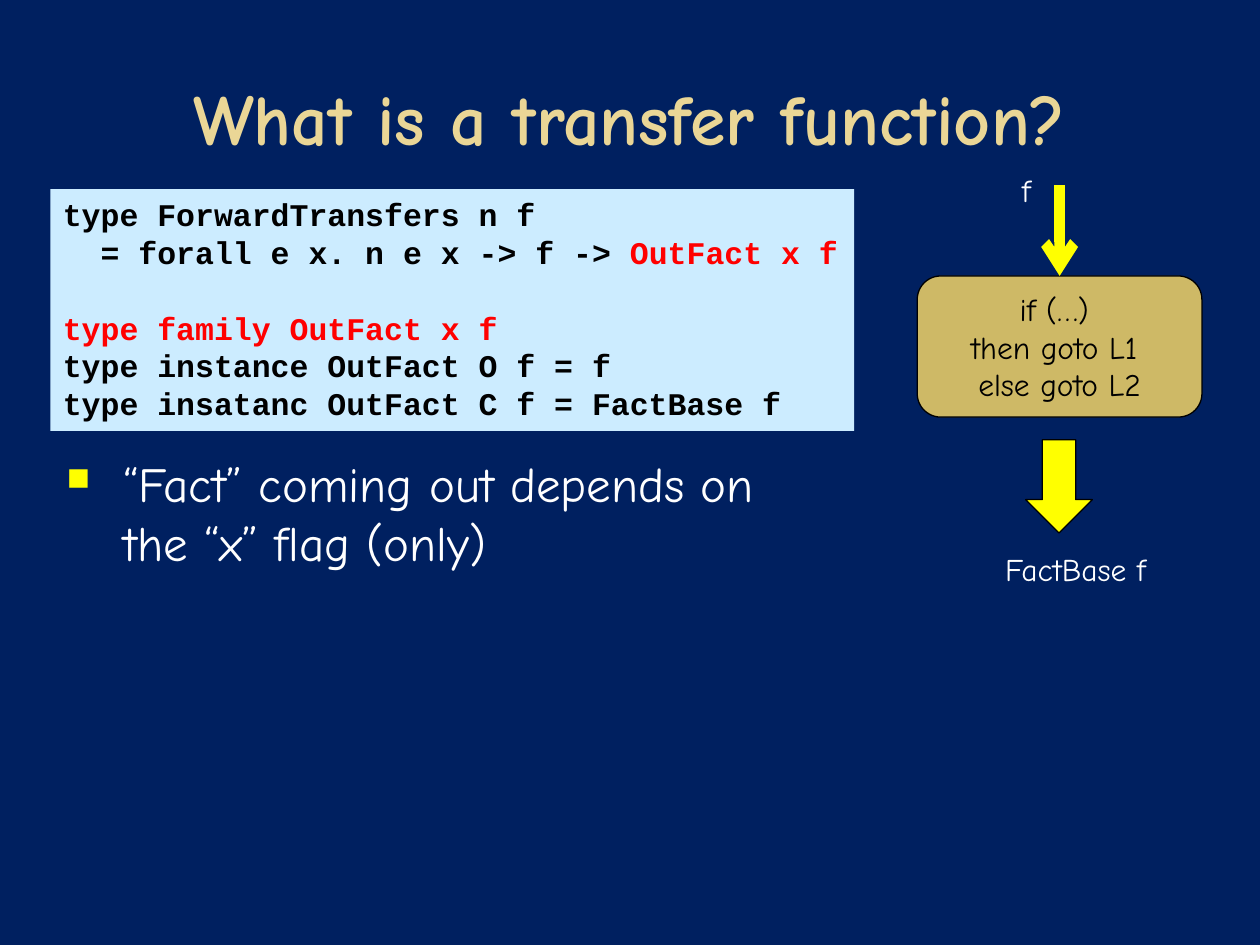
"""Build a slide explaining transfer functions in dataflow analysis."""
from dataclasses import dataclass
from typing import Optional

from lxml import etree
from pptx import Presentation
from pptx import util as u
from pptx.dml.color import RGBColor
from pptx.enum import shapes, text
from pptx.oxml import ns

HUES = {
    "navy": "002060", "gold": "EAD696", "white": "FFFFFF", "black": "000000",
    "red": "FF0000", "yellow": "FFFF00", "sky": "CCECFF", "tan": "CEB966",
}
SANS, MONO = "Comic Neue", "Courier New"
KIND, ALIGN = shapes.MSO_SHAPE, text.PP_ALIGN


@dataclass
class Box:
    left: float
    top: float
    width: float
    height: float

    def emu(self) -> list:
        return [u.Inches(n) for n in (self.left, self.top, self.width, self.height)]


@dataclass
class Line:
    spans: list
    indent: float = 0
    gap: float = 0


@dataclass
class Label:
    words: str
    box: Box


CODE = [
    Line([("type ForwardTransfers n f", "black")]),
    Line([("= forall e x. n e x -> f -> ", "black"), ("OutFact x f", "red")], indent=0.3),
    Line([("type family OutFact x f", "red")], gap=21.6),
    Line([("type instance OutFact O f = f", "black")]),
    Line([("type insatanc OutFact C f = FactBase f", "black")]),
]
LABELS = [
    Label("FactBase f", Box(7.79, 4.32, 1.49, 0.4)),
    Label("f", Box(7.98, 1.31, 0.33, 0.4)),
]


def hue(name: str) -> RGBColor:
    return RGBColor.from_string(HUES[name])


def style(para, size: float, color: str, align=ALIGN.LEFT, face: str = SANS, bold: bool = False) -> None:
    para.alignment = align
    font = para.font
    font.name, font.size, font.bold = face, u.Pt(size), bold
    font.color.rgb = hue(color)


def add_block(slide, kind, box: Box, fill: str, edge: Optional[str] = "black"):
    block = slide.shapes.add_shape(kind, *box.emu())
    block.shadow.inherit = False
    block.fill.solid()
    block.fill.fore_color.rgb = hue(fill)
    if edge:
        block.line.color.rgb = hue(edge)
        block.line.width = u.Pt(0.75)
    else:
        block.line.fill.background()
    return block


def add_text(slide, label: Label, size: float, align, wrap: bool):
    frame = slide.shapes.add_textbox(*label.box.emu()).text_frame
    frame.word_wrap = wrap
    para = frame.paragraphs[0]
    para.text = label.words
    style(para, size, "white", align)
    return para


def add_code(slide, box: Box, lines: list) -> None:
    frame = add_block(slide, KIND.RECTANGLE, box, "sky", None).text_frame
    frame.word_wrap = False
    frame.vertical_anchor = text.MSO_ANCHOR.TOP
    for i, line in enumerate(lines):
        para = frame.add_paragraph() if i else frame.paragraphs[0]
        style(para, 18, "black", face=MONO, bold=True)
        para.space_before = u.Pt(line.gap)
        para._p.get_or_add_pPr().set("marL", str(u.Inches(line.indent)))
        for words, color in line.spans:
            run = para.add_run()
            run.text = words
            run.font.color.rgb = hue(color)


def add_bullet(para) -> None:
    props = para._p.get_or_add_pPr()
    props.set("marL", str(u.Inches(0.6)))
    props.set("indent", str(u.Inches(-0.45)))
    tint = etree.Element(ns.qn("a:buClr"))
    etree.SubElement(tint, ns.qn("a:srgbClr"), val=HUES["yellow"])
    size = etree.Element(ns.qn("a:buSzPct"), val="65000")
    mark = etree.Element(ns.qn("a:buChar"), char="■")
    for i, node in enumerate((tint, size, mark)):
        props.insert(i, node)


def add_arrow(slide, x: float, start: float, goal) -> None:
    arrow = slide.shapes.add_connector(
        shapes.MSO_CONNECTOR.STRAIGHT, u.Inches(x), u.Inches(start), u.Inches(x), goal.top)
    arrow.end_connect(goal, 0)
    arrow.line.color.rgb = hue("yellow")
    arrow.line.width = u.Pt(6)
    etree.SubElement(arrow.line._get_or_add_ln(), ns.qn("a:tailEnd"), type="arrow")
    etree.SubElement(arrow._element.spPr, ns.qn("a:effectLst"))


def main() -> None:
    deck = Presentation()
    deck.slide_width, deck.slide_height = u.Inches(10), u.Inches(7.5)
    slide = deck.slides.add_slide(deck.slide_layouts[5])
    slide.background.fill.solid()
    slide.background.fill.fore_color.rgb = hue("navy")

    title = slide.shapes.title
    title.left, title.top, title.width, title.height = Box(0.5, 0.3, 9, 1.25).emu()
    title.text_frame.text = "What is a transfer function?"
    title.text_frame.vertical_anchor = text.MSO_ANCHOR.MIDDLE
    style(title.text_frame.paragraphs[0], 41, "gold", ALIGN.CENTER, bold=True)

    point = Label("“Fact” coming out depends on \vthe “x” flag (only)", Box(0.28, 3.55, 9, 3.49))
    add_bullet(add_text(slide, point, 28, ALIGN.LEFT, True))
    add_code(slide, Box(0.4, 1.5, 6.38, 1.92), CODE)

    branch = add_block(slide, KIND.ROUNDED_RECTANGLE, Box(7.28, 2.19, 2.26, 1.12), "tan")
    branch.text_frame.vertical_anchor = text.MSO_ANCHOR.MIDDLE
    para = branch.text_frame.paragraphs[0]
    para.text = "if (…) \vthen goto L1 \velse goto L2"
    style(para, 18, "black", ALIGN.CENTER)

    add_arrow(slide, 8.41, 1.47, branch)
    add_block(slide, KIND.DOWN_ARROW, Box(8.14, 3.49, 0.53, 0.74), "yellow")
    for label in LABELS:
        add_text(slide, label, 18, ALIGN.CENTER, False)
    deck.save("out.pptx")


if __name__ == "__main__":
    main()
